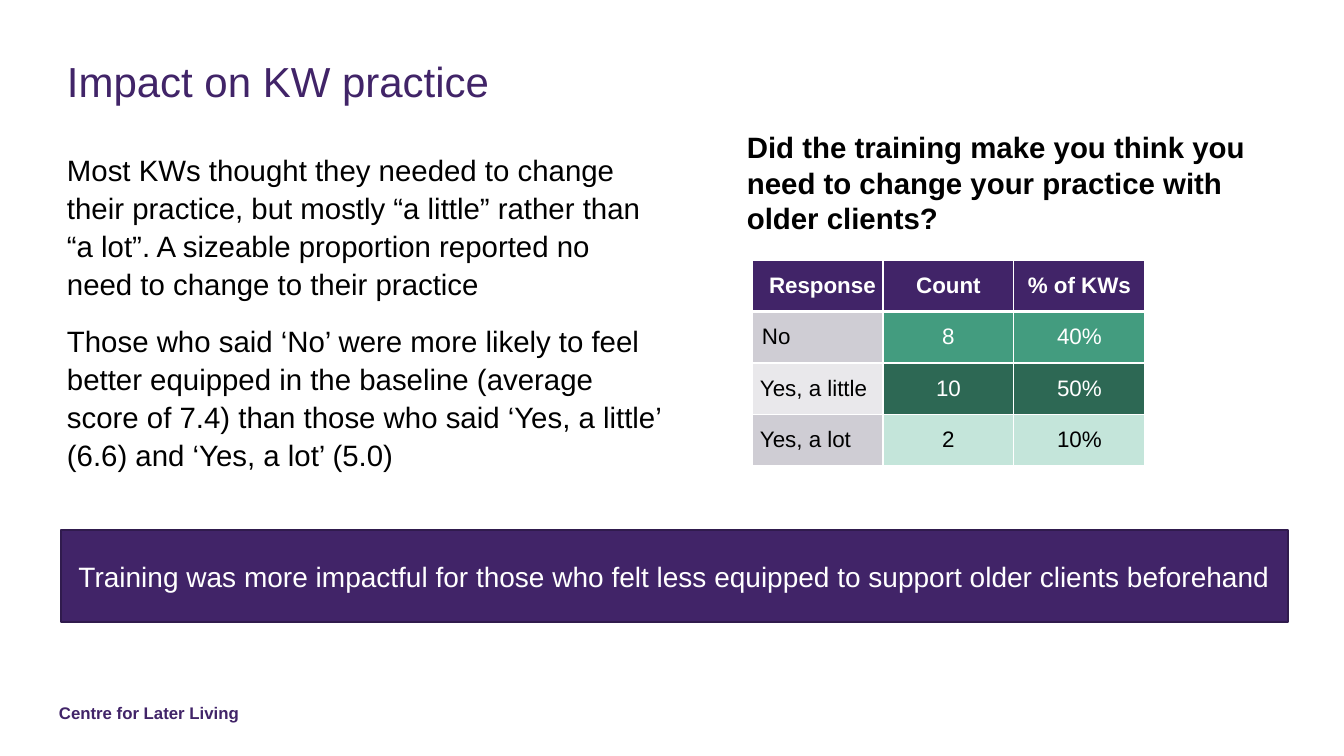
import pptx
import pptx.dml.color
import pptx.enum.shapes
import pptx.enum.text
import pptx.oxml
import pptx.oxml.ns
import pptx.util

# Content
TITLE = "Impact on KW practice"
FINDINGS = [
    "Most KWs thought they needed to change their practice, but mostly “a little” rather than "
    "“a lot”. A sizeable proportion reported no need to change to their practice",
    "Those who said ‘No’ were more likely to feel better equipped in the baseline (average score "
    "of 7.4) than those who said ‘Yes, a little’ (6.6) and ‘Yes, a lot’ (5.0)",
]
QUESTION = "Did the training make you think you need to change your practice with older clients?"
RESPONSES = [
    ("Response", "Count", "% of KWs"),
    ("No", "8", "40%"),
    ("Yes, a little", "10", "50%"),
    ("Yes, a lot", "2", "10%"),
]
TAKEAWAY = "Training was more impactful for those who felt less equipped to support older clients beforehand"
FOOTER = "Centre for Later Living"

# Colours
PURPLE, DARK_PURPLE, WHITE, BLACK = "412468", "301B4D", "FFFFFF", "000000"
LABEL_FILLS = [PURPLE, "CFCDD4", "E9E8EB", "CFCDD4"]
VALUE_FILLS = [PURPLE, "439C7F", "2D6854", "C4E5DA"]
VALUE_COLOURS = [WHITE, WHITE, WHITE, BLACK]

# Positions in px: left, top, width, height
TITLE_BOX = (67, 56, 596, 68)
FINDINGS_BOX = (67, 150, 596, 399)
QUESTION_BOX = (737, 124, 551, 117)
TABLE_BOX = (752, 260, 393, 206)
TAKEAWAY_BOX = (61, 530, 1227, 92)
FOOTER_BOX = (59, 703, 359, 20)
LABEL_INDENTS = [10, 10, 8, 8]

Pt = pptx.util.Pt
ALIGN = pptx.enum.text.PP_ALIGN
MIDDLE = pptx.enum.text.MSO_ANCHOR.MIDDLE
NO_INSETS = dict.fromkeys(("margin_left", "margin_top", "margin_right", "margin_bottom"), 0)


def px(length):
    return round(length * 914400 / 100.8)


def colour(hex_value):
    return pptx.dml.color.RGBColor.from_string(hex_value)


def assign(target, values):
    for name, value in values.items():
        setattr(target, name, value)


def write(frame, lines, size, hex_value, bold=False, **paragraph_format):
    frame.word_wrap = True
    for index, line in enumerate(lines):
        paragraph = frame.add_paragraph() if index else frame.paragraphs[0]
        paragraph.text = line
        assign(paragraph, paragraph_format)
        font = paragraph.runs[0].font
        assign(font, {"name": "Arial", "size": Pt(size), "bold": bold})
        font.color.rgb = colour(hex_value)


def add_text(box, frame_format, *text, **text_format):
    frame = slide.shapes.add_textbox(*map(px, box)).text_frame
    assign(frame, frame_format)
    write(frame, *text, **text_format)


def add_borders(cell, bottom_width):
    properties = cell._tc.get_or_add_tcPr()
    widths = {"lnL": 1, "lnR": 1, "lnT": 1, "lnB": bottom_width}
    for position, (side, width) in enumerate(widths.items()):
        border = pptx.oxml.parse_xml(
            f'<a:{side} {pptx.oxml.ns.nsdecls("a")} w="{Pt(width)}">'
            f'<a:solidFill><a:srgbClr val="{WHITE}"/></a:solidFill></a:{side}>')
        properties.insert(position, border)


presentation = pptx.Presentation()
presentation.slide_width = px(1344)
presentation.slide_height = px(756)
slide = presentation.slides.add_slide(presentation.slide_layouts[6])

# Title, findings, question and footer
add_text(FOOTER_BOX, NO_INSETS, [FOOTER], 12, PURPLE, bold=True)
add_text(FINDINGS_BOX, NO_INSETS, FINDINGS, 21, BLACK, line_spacing=Pt(27), space_after=Pt(14))
add_text(TITLE_BOX, NO_INSETS, [TITLE], 30, PURPLE, line_spacing=Pt(36))
add_text(QUESTION_BOX, {"vertical_anchor": MIDDLE}, [QUESTION], 21, BLACK, bold=True)

# Response table
row_count, column_count = len(RESPONSES), len(RESPONSES[0])
table = slide.shapes.add_table(row_count, column_count, *map(px, TABLE_BOX)).table
for column in table.columns:
    column.width = px(TABLE_BOX[2] / column_count)
for row_index, response in enumerate(RESPONSES):
    table.rows[row_index].height = px(TABLE_BOX[3] / row_count)
    is_header = row_index == 0
    for column_index, entry in enumerate(response):
        cell = table.cell(row_index, column_index)
        is_label = column_index == 0
        fills = LABEL_FILLS if is_label else VALUE_FILLS
        assign(cell, {**NO_INSETS, "vertical_anchor": MIDDLE})
        if is_label:
            cell.margin_left = px(LABEL_INDENTS[row_index])
        cell.fill.solid()
        cell.fill.fore_color.rgb = colour(fills[row_index])
        add_borders(cell, 3 if is_header else 1)
        write(cell.text_frame, [entry], 16,
              BLACK if is_label and not is_header else VALUE_COLOURS[row_index],
              bold=is_header,
              alignment=ALIGN.LEFT if is_label and not is_header else ALIGN.CENTER,
              line_spacing=1.0 if is_label or is_header else Pt(17.5))
# The header's lower border is shared with the first response row
for cell in table.rows[1].cells:
    cell._tc.tcPr.find(pptx.oxml.ns.qn("a:lnT")).set("w", str(Pt(3)))

# Takeaway banner
banner = slide.shapes.add_shape(pptx.enum.shapes.MSO_SHAPE.RECTANGLE, *map(px, TAKEAWAY_BOX))
banner.shadow.inherit = False
banner.fill.solid()
banner.fill.fore_color.rgb = colour(PURPLE)
banner.line.color.rgb = colour(DARK_PURPLE)
banner.line.width = Pt(1)
banner.text_frame.vertical_anchor = MIDDLE
write(banner.text_frame, [TAKEAWAY], 20, WHITE, alignment=ALIGN.CENTER)

presentation.save("out.pptx")
